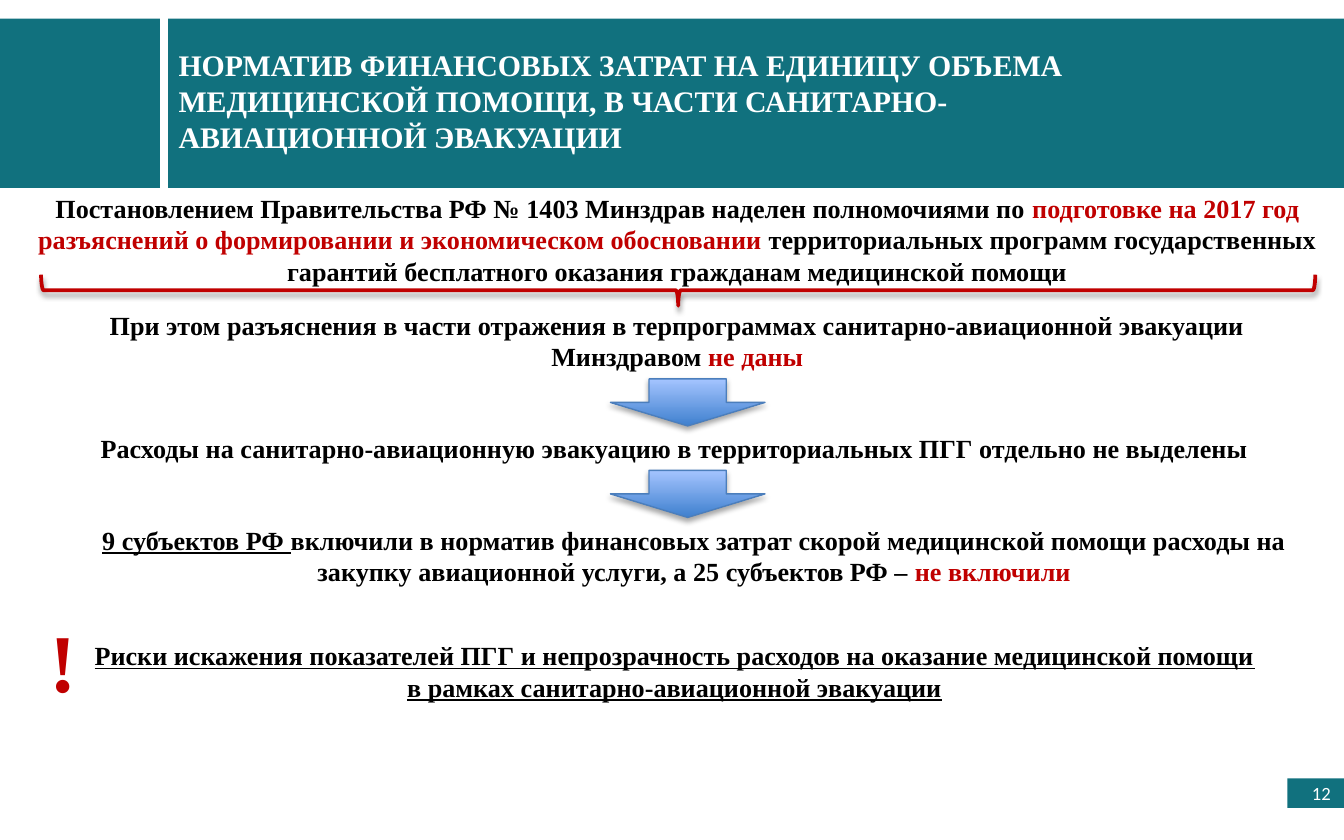
from lxml.etree import SubElement
from pptx import Presentation
from pptx.dml.color import RGBColor
from pptx.enum.shapes import MSO_SHAPE as SHAPE
from pptx.enum.text import MSO_ANCHOR as ANCHOR, MSO_AUTO_SIZE as AUTO, PP_ALIGN as ALIGN
from pptx.oxml.ns import qn
from pptx.util import Pt

TEAL, RED, BLACK, WHITE = "11717E", "C00000", "000000", "FFFFFF"
SERIF = "Times New Roman"

TITLE = ("НОРМАТИВ ФИНАНСОВЫХ ЗАТРАТ НА ЕДИНИЦУ ОБЪЕМА МЕДИЦИНСКОЙ ПОМОЩИ, "
         "В ЧАСТИ САНИТАРНО-АВИАЦИОННОЙ ЭВАКУАЦИИ")
TITLE_BOX = (88.5, 21.6, 523.5, 65.5)
BANDS = [(90, 10, 630, 90.7), (0, 10, 85.7, 90.7)]
NUMBER_BOX = (689.7, 417, 30.3, 15.8)
STATEMENTS = [
    ((2.9, 99.4, 720, 58.3), [
        ("Постановлением Правительства РФ № 1403 Минздрав наделен полномочиями по ", {}),
        ("подготовке на 2017 год разъяснений о формировании и экономическом обосновании ",
         {"color": RED}),
        ("территориальных программ государственных гарантий бесплатного оказания "
         "гражданам медицинской помощи", {})]),
    ((21.6, 162, 682.5, 41), [
        ("При этом разъяснения в части отражения в терпрограммах "
         "санитарно-авиационной эвакуации Минздравом ", {}),
        ("не даны", {"color": RED})]),
    ((39.6, 228.2, 643.7, 24.5), [
        ("Расходы на санитарно-авиационную эвакуацию в территориальных ПГГ "
         "отдельно не выделены", {})]),
    ((39.6, 277.2, 664.5, 41), [
        ("9 субъектов РФ ", {"underline": True}),
        ("включили в норматив финансовых затрат скорой медицинской помощи расходы на "
         "закупку авиационной услуги, а 25 субъектов РФ – ", {}),
        ("не включили", {"color": RED})]),
    ((39.6, 339.1, 643.7, 41), [
        ("Риски искажения показателей ПГГ и непрозрачность расходов на оказание "
         "медицинской помощи в рамках санитарно-авиационной эвакуации",
         {"underline": True})]),
]
MARK_BOX = (19.4, 323.3, 29.5, 60.5)
BRACE_BOX = (355, -185.8, 16.6, 682.6)
ARROW_LEFT, ARROW_WIDTH, ARROW_HEIGHT = 327, 82.8, 25.2
ARROW_TOPS = [203, 252]


def rgb(value):
    return RGBColor.from_string(value)


def place(sp, box):
    sp.left, sp.top, sp.width, sp.height = map(Pt, box)


def write(sp, runs, align=ALIGN.CENTER, anchor=ANCHOR.TOP, wrap=True, size=14,
          font=SERIF, color=BLACK, bold=True):
    tf = sp.text_frame
    tf.word_wrap, tf.auto_size, tf.vertical_anchor = wrap, AUTO.NONE, anchor
    p = tf.paragraphs[0]
    p.alignment = align
    for text, style in runs:
        r = p.add_run()
        r.text = text
        r.font.size, r.font.name, r.font.bold = Pt(size), font, bold
        r.font.underline = style.get("underline", False)
        r.font.color.rgb = rgb(style.get("color", color))


def add_shape(slide, kind, box, fill=None, line=None, width=1):
    sp = slide.shapes.add_shape(kind, *map(Pt, box))
    sp.shadow.inherit = False
    if fill:
        sp.fill.solid()
        sp.fill.fore_color.rgb = rgb(fill)
    else:
        sp.fill.background()
    if line:
        sp.line.color.rgb = rgb(line)
        sp.line.width = Pt(width)
    else:
        sp.line.fill.background()
    return sp


def cast_shadow(sp, alpha, distance):
    effects = sp._element.spPr.find(qn("a:effectLst"))
    shadow = SubElement(effects, qn("a:outerShdw"), blurRad=str(Pt(3.1)),
                        dist=str(Pt(distance)), dir="5400000", rotWithShape="0")
    color = SubElement(shadow, qn("a:srgbClr"), val=BLACK)
    SubElement(color, qn("a:alpha"), val=str(alpha * 1000))


def add_arrow(slide, top):
    box = (ARROW_LEFT, top, ARROW_WIDTH, ARROW_HEIGHT)
    sp = add_shape(slide, SHAPE.DOWN_ARROW, box, line="4B7EBC", width=0.75)
    sp.fill.gradient()
    sp.fill.gradient_angle = 90
    for stop, color, position in zip(sp.fill.gradient_stops, ("3F80CE", "A4C4FF"), (0, 1)):
        stop.color.rgb = rgb(color)
        stop.position = position
    cast_shadow(sp, 35, 1.8)


def main():
    """Build the slide on the air ambulance cost standard."""
    prs = Presentation()
    prs.slide_width, prs.slide_height = Pt(720), Pt(450)
    slide = prs.slides.add_slide(prs.slide_layouts[5])

    for box in BANDS:
        add_shape(slide, SHAPE.RECTANGLE, box, fill=TEAL)
    number = add_shape(slide, SHAPE.RECTANGLE, NUMBER_BOX, fill=TEAL)
    write(number, [("12", {})], align=ALIGN.RIGHT, anchor=ANCHOR.MIDDLE, size=10,
          font="Calibri", color=WHITE, bold=False)

    title = slide.shapes.title
    place(title, TITLE_BOX)
    write(title, [(TITLE, {})], align=ALIGN.LEFT, size=16, color=WHITE)
    slide.shapes._spTree.append(title._element)

    for box, runs in STATEMENTS:
        write(slide.shapes.add_textbox(*map(Pt, box)), runs)
    write(slide.shapes.add_textbox(*map(Pt, MARK_BOX)), [("!", {})], align=ALIGN.LEFT,
          wrap=False, size=44, color=RED)

    brace = add_shape(slide, SHAPE.RIGHT_BRACE, BRACE_BOX, line=RED, width=2)
    brace.rotation = 90
    cast_shadow(brace, 38, 1.6)
    for top in ARROW_TOPS:
        add_arrow(slide, top)

    prs.save("out.pptx")


if __name__ == "__main__":
    main()
